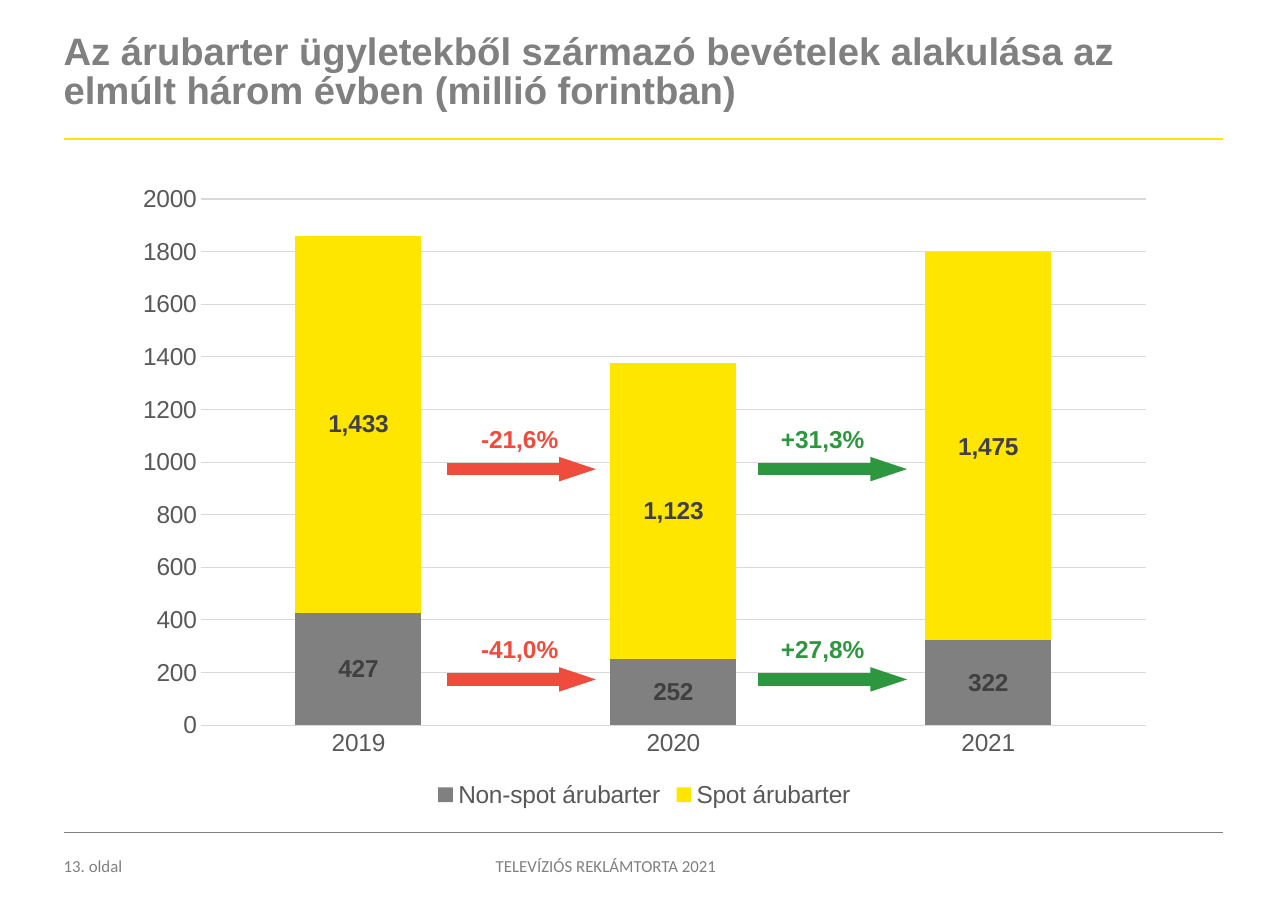
from lxml.etree import SubElement
from pptx import Presentation
from pptx.chart.data import CategoryChartData
from pptx.dml.color import RGBColor
from pptx.enum.chart import XL_CHART_TYPE, XL_LABEL_POSITION, XL_LEGEND_POSITION, XL_TICK_MARK
from pptx.enum.shapes import MSO_CONNECTOR
from pptx.enum.text import MSO_ANCHOR, MSO_AUTO_SIZE, PP_ALIGN
from pptx.oxml.ns import qn
from pptx.util import Cm, Pt

GREY, YELLOW, RED, GREEN = "808080", "FFE600", "F04C3E", "2C973E"
AXIS_TEXT, LABEL_TEXT, GRID = "595959", "404040", "D9D9D9"
LEFT, RIGHT = 1.47, 28.22
WIDTH = RIGHT - LEFT


def color(value):
    return RGBColor.from_string(value)


def format_font(font, size, fill, bold=False, name="Arial"):
    font.name, font.size, font.bold = name, Pt(size), bold
    font.color.rgb = color(fill)


def write(box, text, size, fill, bold=False, name="Arial", align=PP_ALIGN.LEFT,
          spacing=1.0, inset=0.0):
    frame = box.text_frame
    frame.word_wrap = True
    frame.auto_size = MSO_AUTO_SIZE.NONE
    frame.vertical_anchor = MSO_ANCHOR.TOP
    frame.margin_left = frame.margin_right = Cm(inset)
    frame.margin_top = frame.margin_bottom = Cm(inset / 2)
    para = frame.paragraphs[0]
    para.alignment, para.line_spacing, para.space_before = align, spacing, Pt(0)
    span = para.add_run()
    span.text = text
    format_font(span.font, size, fill, bold, name)


class SlideBuilder:
    """Adds consistently styled elements to the current page."""

    def __init__(self, deck):
        self.page = deck.slides.add_slide(deck.slide_layouts[5])

    def title(self, text, left, top, width, height):
        box = self.page.shapes.title
        box.left, box.top, box.width, box.height = map(Cm, (left, top, width, height))
        write(box, text, 25, GREY, bold=True, spacing=0.85)

    def text(self, text, left, top, width, height, **style):
        box = self.page.shapes.add_textbox(*map(Cm, (left, top, width, height)))
        write(box, text, **style)

    def line(self, left, right, y, fill, width, arrow=False):
        line = self.page.shapes.add_connector(
            MSO_CONNECTOR.STRAIGHT, Cm(left), Cm(y), Cm(right), Cm(y))
        line.line.color.rgb = color(fill)
        line.line.width = Pt(width)
        properties = line.line._get_or_add_ln()
        if arrow:
            properties.set("cap", "sq")
            SubElement(properties, qn("a:tailEnd"), type="triangle", w="sm", len="med")
        SubElement(line._element.spPr, qn("a:effectLst"))

    def stacked_chart(self, years, series, left, top, width, height):
        data = CategoryChartData(number_format="#,##0")
        data.categories = years
        for name, values, _ in series:
            data.add_series(name, values)
        chart = self.page.shapes.add_chart(
            XL_CHART_TYPE.COLUMN_STACKED, *map(Cm, (left, top, width, height)), data).chart
        format_font(chart.font, 16, AXIS_TEXT)
        chart.has_title = False
        chart.has_legend = True
        chart.legend.position = XL_LEGEND_POSITION.BOTTOM
        chart.legend.include_in_layout = False
        format_font(chart.legend.font, 16, AXIS_TEXT)
        for axis in (chart.category_axis, chart.value_axis):
            axis.major_tick_mark = axis.minor_tick_mark = XL_TICK_MARK.NONE
            format_font(axis.tick_labels.font, 16, AXIS_TEXT)
        values_axis = chart.value_axis
        values_axis.minimum_scale, values_axis.maximum_scale = 0, 2000
        values_axis.major_unit = 200
        values_axis.tick_labels.number_format = "0"
        values_axis.tick_labels.number_format_is_linked = False
        values_axis.format.line.fill.background()
        for rule in (chart.category_axis.format.line, values_axis.major_gridlines.format.line):
            rule.color.rgb = color(GRID)
            rule.width = Pt(0.75)
        plot = chart.plots[0]
        plot.gap_width, plot.overlap, plot.vary_by_categories = 150, 100, False
        for bars, (_, _, fill) in zip(plot.series, series):
            bars.format.fill.solid()
            bars.format.fill.fore_color.rgb = color(fill)
            labels = bars.data_labels
            labels.show_value = True
            labels.position = XL_LABEL_POSITION.CENTER
            labels.number_format, labels.number_format_is_linked = "#,##0", False
            format_font(labels.font, 16, LABEL_TEXT, bold=True)

    def trend(self, text, arrow_left, label_left, y, fill):
        self.line(arrow_left, arrow_left + 3.3, y, fill, 8, arrow=True)
        self.text(text, label_left, y - 1.17, 2.75, 1.19,
                  size=16, fill=fill, bold=True, inset=0.25)


def main():
    deck = Presentation()
    deck.slide_width, deck.slide_height = Cm(29.72), Cm(21.08)
    slide = SlideBuilder(deck)
    slide.title("Az árubarter ügyletekből származó bevételek alakulása az "
                "elmúlt három évben (millió forintban)", LEFT, 0.79, WIDTH, 2.39)
    slide.line(LEFT, RIGHT, 3.2, YELLOW, 1.5)
    slide.line(LEFT, RIGHT, 19.2, GREY, 0.25)
    slide.stacked_chart(
        ["2019", "2020", "2021"],
        [("Non-spot árubarter", (427, 252, 322), GREY),
         ("Spot árubarter", (1433, 1123, 1475), YELLOW)],
        2.82, 3.99, 24.1, 14.76)
    columns = [(10.45, 10.85, RED), (17.63, 17.77, GREEN)]
    rows = [(10.82, ("-21,6%", "+31,3%")), (15.67, ("-41,0%", "+27,8%"))]
    for y, changes in rows:
        for change, (arrow_left, label_left, fill) in zip(changes, columns):
            slide.trend(change, arrow_left, label_left, y, fill)
    footer = {"size": 11, "fill": GREY, "name": "Calibri"}
    slide.text("13. oldal", LEFT, 19.74, 2.16, 0.61, **footer)
    slide.text("TELEVÍZIÓS REKLÁMTORTA 2021", 8.41, 19.74, 11.15, 0.61,
               align=PP_ALIGN.CENTER, **footer)
    deck.save("out.pptx")


if __name__ == "__main__":
    main()
